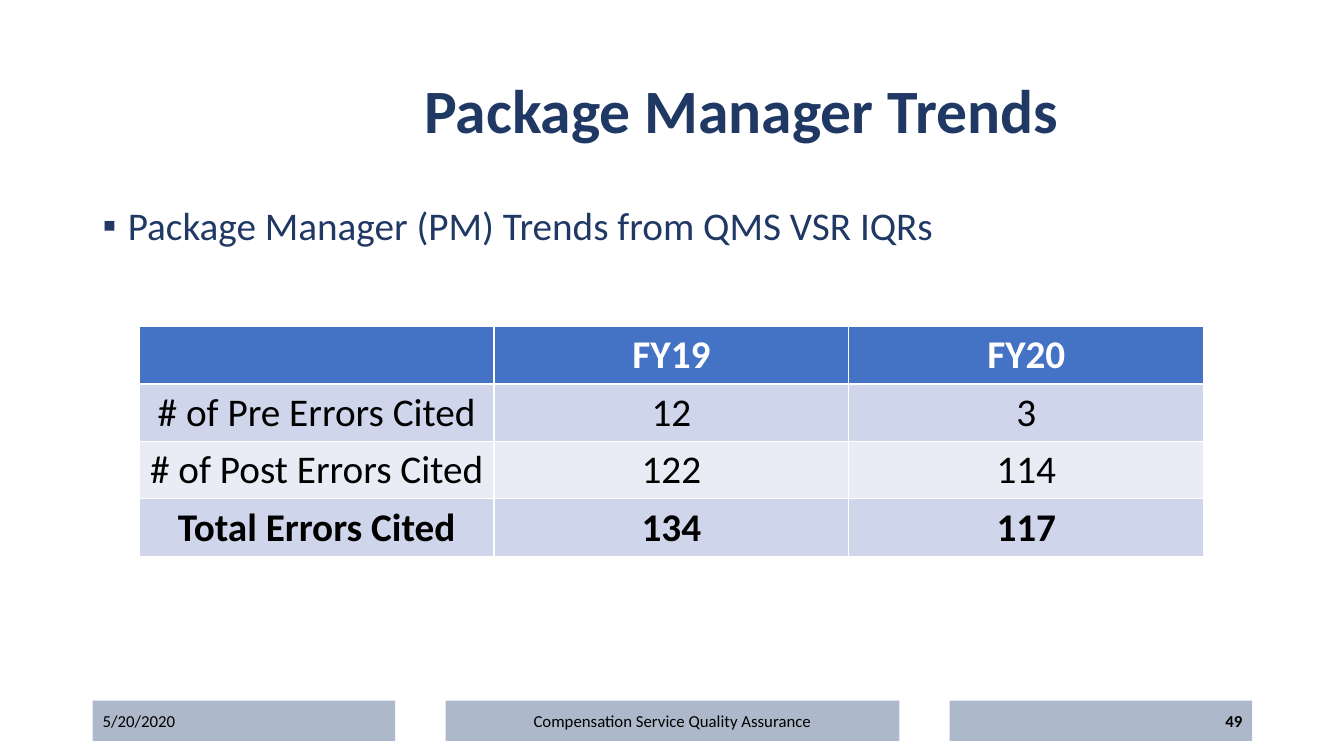
from dataclasses import dataclass

from lxml.etree import SubElement
from pptx import Presentation
from pptx.dml.color import RGBColor
from pptx.enum.shapes import MSO_SHAPE as Shape
from pptx.enum.text import MSO_ANCHOR as Anchor, PP_ALIGN as Align
from pptx.oxml.ns import qn
from pptx.util import Inches, Pt

HUES = {
    "navy": "203864", "blue": "4472C4", "band": "CFD5EA", "pale": "E9EBF5",
    "bar": "ADB9CA", "black": "000000", "white": "FFFFFF",
}


@dataclass
class Bar:
    left: float
    width: float
    text: str
    align: Align
    bold: bool = False


@dataclass
class Row:
    cells: tuple[str, ...]
    fill: str
    ink: str = "black"
    bold: bool = False


BARS = [
    Bar(0.92, 3, "5/20/2020", Align.LEFT),
    Bar(4.42, 4.5, "Compensation Service Quality Assurance", Align.CENTER),
    Bar(9.42, 3, "49", Align.RIGHT, bold=True),
]
ROWS = [
    Row(("", "FY19", "FY20"), "blue", "white", True),
    Row(("# of Pre Errors Cited", "12", "3"), "band"),
    Row(("# of Post Errors Cited", "122", "114"), "pale"),
    Row(("Total Errors Cited", "134", "117"), "band", bold=True),
]


def color(name: str) -> RGBColor:
    return RGBColor.from_string(HUES[name])


def style(para, size: float, ink: str, align: Align, bold: bool = False) -> None:
    para.alignment = align
    font = para.font
    font.name, font.size, font.bold = "Calibri", Pt(size), bold
    font.color.rgb = color(ink)


def paint(part, name: str) -> None:
    part.fill.solid()
    part.fill.fore_color.rgb = color(name)


def add_title(slide, text: str) -> None:
    title = slide.shapes.title
    title.left, title.top = Inches(2.3), Inches(0.4)
    title.width, title.height = Inches(10.11), Inches(1.45)
    frame = title.text_frame
    frame.text = text
    frame.vertical_anchor = Anchor.MIDDLE
    para = frame.paragraphs[0]
    para.line_spacing = 0.9
    style(para, 44, "navy", Align.CENTER, True)


def add_point(slide, text: str) -> None:
    box = slide.shapes.add_textbox(Inches(0.92), Inches(2), Inches(11.5), Inches(1))
    frame = box.text_frame
    frame.word_wrap = True
    frame.text = text
    para = frame.paragraphs[0]
    para.line_spacing = 0.9
    props = para._p.get_or_add_pPr()
    props.set("marL", str(Inches(0.25)))
    props.set("indent", str(Inches(-0.25)))
    SubElement(props, qn("a:buFont"), typeface="Arial")
    SubElement(props, qn("a:buChar"), char="▪")
    style(para, 28, "navy", Align.LEFT)


def add_grid(slide, rows: list[Row]) -> None:
    count, wide, high = len(rows[0].cells), 3.52, 0.57
    table = slide.shapes.add_table(
        len(rows), count, Inches(1.38), Inches(3.24),
        Inches(wide * count), Inches(high * len(rows))).table
    for line, row in zip(table.rows, rows):
        for cell, text in zip(line.cells, row.cells):
            cell.text = text
            paint(cell, row.fill)
            style(cell.text_frame.paragraphs[0], 28, row.ink, Align.CENTER, row.bold)


def add_bar(slide, bar: Bar) -> None:
    shape = slide.shapes.add_shape(
        Shape.RECTANGLE, Inches(bar.left), Inches(6.95), Inches(bar.width), Inches(0.4))
    shape.shadow.inherit = False
    shape.line.fill.background()
    paint(shape, bar.fill if hasattr(bar, "fill") else "bar")
    frame = shape.text_frame
    frame.text = bar.text
    frame.vertical_anchor = Anchor.MIDDLE
    style(frame.paragraphs[0], 12, "black", bar.align, bar.bold)


def main() -> None:
    deck = Presentation()
    deck.slide_width, deck.slide_height = Inches(13.33), Inches(7.5)
    slide = deck.slides.add_slide(deck.slide_layouts[5])

    # Heading and bullet
    add_title(slide, "Package Manager Trends")
    add_point(slide, "Package Manager (PM) Trends from QMS VSR IQRs")

    # Error counts
    add_grid(slide, ROWS)

    # Footer bars
    for bar in BARS:
        add_bar(slide, bar)

    deck.save("out.pptx")


if __name__ == "__main__":
    main()
